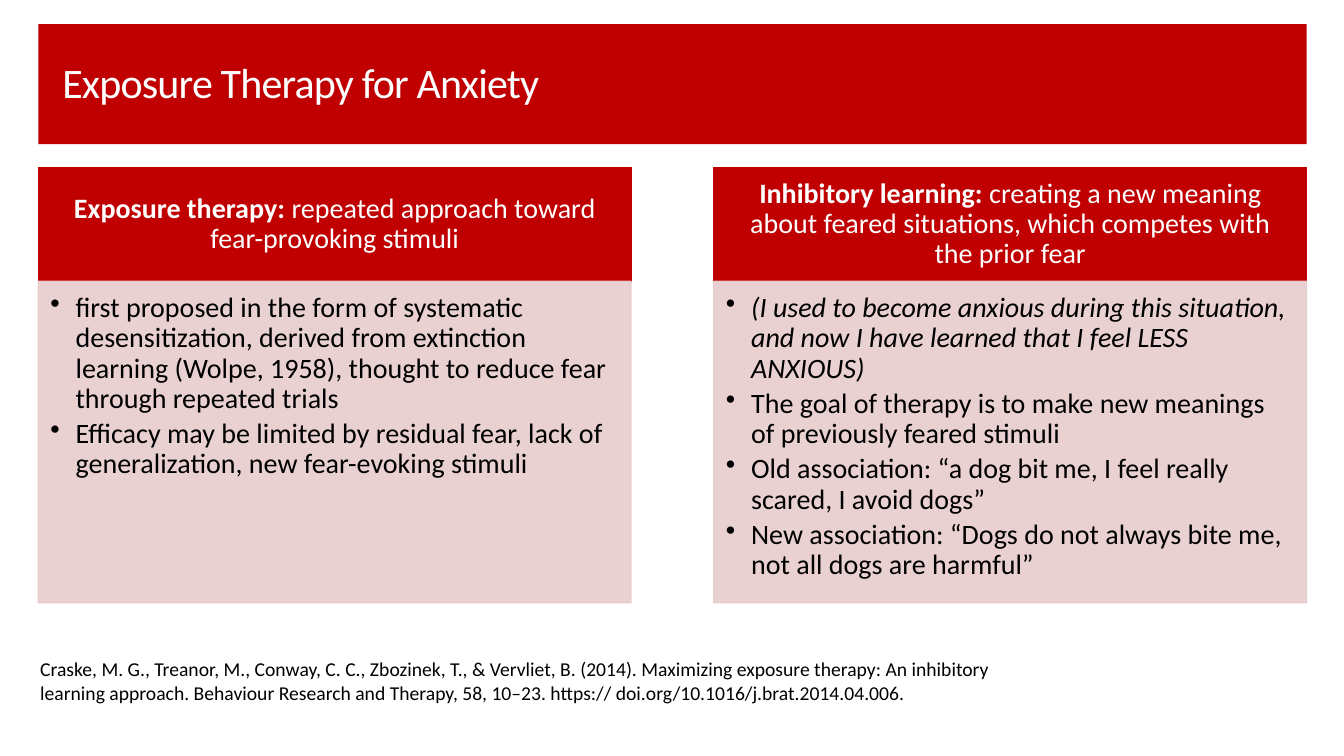
from lxml.etree import SubElement
from pptx import Presentation
from pptx.dml.color import RGBColor
from pptx.enum.shapes import MSO_SHAPE as Shape
from pptx.enum.text import MSO_ANCHOR as Anchor, MSO_AUTO_SIZE as AutoSize, PP_ALIGN as Align
from pptx.oxml.ns import qn
from pptx.util import Pt

PX = 9144  # 100 px to the inch
RED, PINK, WHITE, BLACK = "C00000", "E8CCCC", "FFFFFF", "000000"
COLUMN_WIDTH, HEADING_TOP, HEADING_HEIGHT, BODY_HEIGHT = 588, 166, 113, 319

COLUMNS = [
    (38,
     [("Exposure therapy: ", "b"), ("repeated approach toward fear-provoking stimuli", "")],
     [("first proposed in the form of systematic desensitization, derived from extinction "
       "learning (Wolpe, 1958), thought to reduce fear through repeated trials", ""),
      ("Efficacy may be limited by residual fear, lack of generalization, "
       "new fear-evoking stimuli", "")]),
    (708,
     [("Inhibitory learning:", "b"),
      (" creating a new meaning about feared situations, which competes with the prior fear", "")],
     [("(I used to become anxious during this situation, and now I have learned "
       "that I feel LESS ANXIOUS)", "i"),
      ("The goal of therapy is to make new meanings of previously feared stimuli", ""),
      ("Old association: “a dog bit me, I feel really scared, I avoid dogs”", ""),
      ("New association: “Dogs do not always bite me, not all dogs are harmful”", "")]),
]
REFERENCE = ("Craske, M. G., Treanor, M., Conway, C. C., Zbozinek, T., & Vervliet, B. (2014). "
             "Maximizing exposure therapy: An inhibitory learning approach. Behaviour Research "
             "and Therapy, 58, 10–23. https:// doi.org/10.1016/j.brat.2014.04.006.")


def px(*lengths):
    return [length * PX for length in lengths]


def paint(color_format, color):
    color_format.rgb = RGBColor.from_string(color)


def add_panel(slide, box, color, opacity=100, outlined=True):
    """Draw a filled rectangle, with an outline of the same colour if wanted."""
    shape = slide.shapes.add_shape(Shape.RECTANGLE, *px(*box))
    shape.shadow.inherit = False
    shape.fill.solid()
    paint(shape.fill.fore_color, color)
    if outlined:
        shape.line.width = Pt(0.85)
        paint(shape.line.color, color)
    else:
        shape.line.fill.background()
    if opacity < 100:
        for element in shape.element.spPr.iter(qn("a:srgbClr")):
            SubElement(element, qn("a:alpha"), val=str(opacity * 1000))
    return shape


def set_frame(shape, anchor, margins=(10, 5, 10, 5)):
    frame = shape.text_frame
    frame.word_wrap = True
    frame.vertical_anchor = anchor
    (frame.margin_left, frame.margin_top,
     frame.margin_right, frame.margin_bottom) = px(*margins)
    return frame


def add_run(paragraph, text, size, color, style=""):
    run = paragraph.add_run()
    run.text = text
    run.font.name = "Calibri"
    run.font.size = Pt(size)
    run.font.bold = "b" in style
    run.font.italic = "i" in style
    paint(run.font.color, color)
    return run


def set_bullet(paragraph):
    properties = paragraph._p.get_or_add_pPr()
    properties.set("marL", str(25 * PX))
    properties.set("indent", str(-25 * PX))
    SubElement(properties, qn("a:buChar"), char="•")


def add_title(slide, text):
    add_panel(slide, (38, 24, 1258, 119), RED, outlined=False)
    frame = set_frame(slide.shapes.add_textbox(*px(52, 12, 1150, 145)), Anchor.MIDDLE)
    paragraph = frame.paragraphs[0]
    paragraph.line_spacing = 0.9
    run = add_run(paragraph, text, 30, WHITE)
    run.font._element.set("spc", "-60")


def add_column(slide, left, heading, points):
    panel = add_panel(slide, (left, HEADING_TOP, COLUMN_WIDTH, HEADING_HEIGHT), RED)
    paragraph = set_frame(panel, Anchor.MIDDLE, (16, 9, 16, 9)).paragraphs[0]
    paragraph.alignment = Align.CENTER
    paragraph.line_spacing = 0.9
    for text, style in heading:
        add_run(paragraph, text, 20, WHITE, style)

    body_top = HEADING_TOP + HEADING_HEIGHT
    panel = add_panel(slide, (left, body_top, COLUMN_WIDTH, BODY_HEIGHT), PINK, opacity=90)
    frame = set_frame(panel, Anchor.TOP, (12, 12, 16, 17))
    for index, (text, style) in enumerate(points):
        paragraph = frame.add_paragraph() if index else frame.paragraphs[0]
        set_bullet(paragraph)
        paragraph.alignment = Align.LEFT
        paragraph.line_spacing = 0.9
        paragraph.space_after = Pt(3.6)
        add_run(paragraph, text, 20, BLACK, style)


def add_reference(slide, text):
    frame = set_frame(slide.shapes.add_textbox(*px(30, 647, 976, 57)), Anchor.TOP)
    frame.auto_size = AutoSize.SHAPE_TO_FIT_TEXT
    add_run(frame.paragraphs[0], text, 14, BLACK)


def main():
    presentation = Presentation()
    presentation.slide_width, presentation.slide_height = px(1333, 750)
    slide = presentation.slides.add_slide(presentation.slide_layouts[6])
    add_title(slide, "Exposure Therapy for Anxiety")
    for left, heading, points in COLUMNS:
        add_column(slide, left, heading, points)
    add_reference(slide, REFERENCE)
    presentation.save("out.pptx")


if __name__ == "__main__":
    main()
